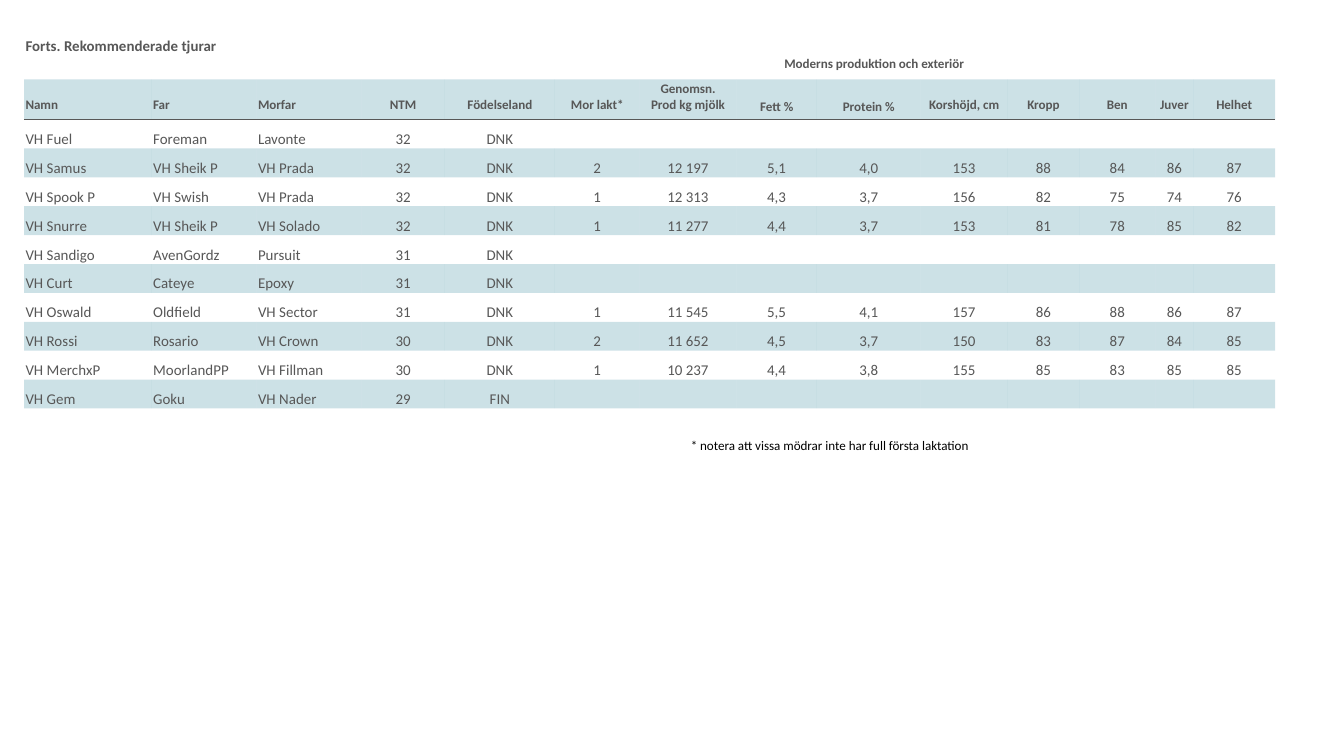
from lxml.etree import SubElement as Sub
from pptx import Presentation
from pptx.dml.color import RGBColor as RGB
from pptx.enum.text import MSO_ANCHOR as Anchor, PP_ALIGN as Align
from pptx.oxml import parse_xml
from pptx.oxml.ns import qn
from pptx.util import Inches, Pt

HUES = {"text": "575757", "band": "006B85", "note": "000000"}
FACE = "Calibri"
PLAIN = "{2D5ABB26-0587-4C30-8999-92F81FD0307C}"
SPACE = "http://schemas.openxmlformats.org/drawingml/2006/main"

TITLE = "Forts. Rekommenderade tjurar"
GROUP = "Moderns produktion och exteriör"
NOTE = "* notera att vissa mödrar inte har full första laktation"
HEADS = ["Namn", "Far", "Morfar", "NTM", "Födelseland", "Mor lakt*",
         "Genomsn.\vProd kg mjölk", "Fett %", "Protein %", "Korshöjd, cm",
         "Kropp", "Ben", "Juver", "Helhet"]
BULLS = [
    ("VH Fuel", "Foreman", "Lavonte", "32", "DNK"),
    ("VH Samus", "VH Sheik P", "VH Prada", "32", "DNK", "2", "12 197",
     "5,1", "4,0", "153", "88", "84", "86", "87"),
    ("VH Spook P", "VH Swish", "VH Prada", "32", "DNK", "1", "12 313",
     "4,3", "3,7", "156", "82", "75", "74", "76"),
    ("VH Snurre", "VH Sheik P", "VH Solado", "32", "DNK", "1", "11 277",
     "4,4", "3,7", "153", "81", "78", "85", "82"),
    ("VH Sandigo", "AvenGordz", "Pursuit", "31", "DNK"),
    ("VH Curt", "Cateye", "Epoxy", "31", "DNK"),
    ("VH Oswald", "Oldfield", "VH Sector", "31", "DNK", "1", "11 545",
     "5,5", "4,1", "157", "86", "88", "86", "87"),
    ("VH Rossi", "Rosario", "VH Crown", "30", "DNK", "2", "11 652",
     "4,5", "3,7", "150", "83", "87", "84", "85"),
    ("VH MerchxP", "MoorlandPP", "VH Fillman", "30", "DNK", "1", "10 237",
     "4,4", "3,8", "155", "85", "83", "85", "85"),
    ("VH Gem", "Goku", "VH Nader", "29", "FIN"),
]
WIDTHS = [0.95, 0.78, 0.78, 0.62, 0.82, 0.63, 0.72,
          0.6, 0.77, 0.65, 0.53, 0.57, 0.28, 0.61]
HEIGHTS = [0.32, 0.3] + [0.215] * len(BULLS)
SPANS = [(0, 1), (3, 4), (5, 12)]


def add_grid(slide, left, top, widths, heights):
    frame = slide.shapes.add_table(
        len(heights), len(widths), Inches(left), Inches(top),
        Inches(sum(widths)), Inches(sum(heights)))
    grid = frame.table
    grid.first_row = grid.horz_banding = False
    next(frame.element.iter(qn("a:tableStyleId"))).text = PLAIN
    for col, wide in zip(grid.columns, widths):
        col.width = Inches(wide)
    for row, high in zip(grid.rows, heights):
        row.height = Inches(high)
    return grid


def put(cell, text, size, bold=False, hue="text", mid=False,
        foot=0.0, anchor=Anchor.BOTTOM):
    pads = {"margin_left": 0.01, "margin_right": 0.01,
            "margin_top": 0.01, "margin_bottom": foot}
    for name, val in pads.items():
        setattr(cell, name, Inches(val))
    cell.vertical_anchor = anchor
    cell.fill.background()
    cell.text = text
    para = cell.text_frame.paragraphs[0]
    para.alignment = Align.CENTER if mid else Align.LEFT
    look = {"name": FACE, "size": Pt(size), "bold": bold}
    for run in para.runs:
        for name, val in look.items():
            setattr(run.font, name, val)
        run.font.color.rgb = RGB.from_string(HUES[hue])
    if not text:
        Sub(para._p, qn("a:endParaRPr"), sz=str(size * 100))


def tint(cell):
    cell.fill.solid()
    cell.fill.fore_color.rgb = RGB.from_string(HUES["band"])
    Sub(cell._tc.tcPr.find(".//" + qn("a:srgbClr")),
        qn("a:alpha"), val="20000")


def edge(cell, ruled=""):
    ink = f'<a:solidFill><a:srgbClr val="{HUES["text"]}"/></a:solidFill>'
    for spot, side in enumerate(["lnL", "lnR", "lnT", "lnB"]):
        fill = ink if side == ruled else "<a:noFill/>"
        cell._tc.tcPr.insert(spot, parse_xml(
            f'<a:{side} xmlns:a="{SPACE}" w="{Pt(1)}">{fill}</a:{side}>'))


def main():
    deck = Presentation()
    deck.slide_width, deck.slide_height = Inches(10), Inches(10 * 9 / 16)
    slide = deck.slides.add_slide(deck.slide_layouts[6])

    grid = add_grid(slide, 0.18, 0.27, WIDTHS, HEIGHTS)
    for col in range(len(WIDTHS)):
        put(grid.cell(0, col), "", 7)
    for first, last in SPANS:
        grid.cell(0, first).merge(grid.cell(0, last))
    put(grid.cell(0, 0), TITLE, 8, True, foot=0.05, anchor=Anchor.TOP)
    put(grid.cell(0, 5), GROUP, 7, True, mid=True, foot=0.05)

    for col, head in enumerate(HEADS):
        cell = grid.cell(1, col)
        foot = 0.03 if head in ("Fett %", "Protein %") else 0.05
        put(cell, head, 7, True, mid=col > 2, foot=foot)
        tint(cell)
        edge(cell, "lnB")
        for row, bull in enumerate(BULLS, 2):
            cell = grid.cell(row, col)
            put(cell, bull[col] if col < len(bull) else "", 8, mid=col > 2)
            if row % 2:
                tint(cell)
            edge(cell, "lnT" if row == 2 else "")

    note = add_grid(slide, 5.13, 3.23, [3.4], [0.2])
    put(note.cell(0, 0), NOTE, 7, hue="note", foot=0.05)
    deck.save("out.pptx")


if __name__ == "__main__":
    main()
